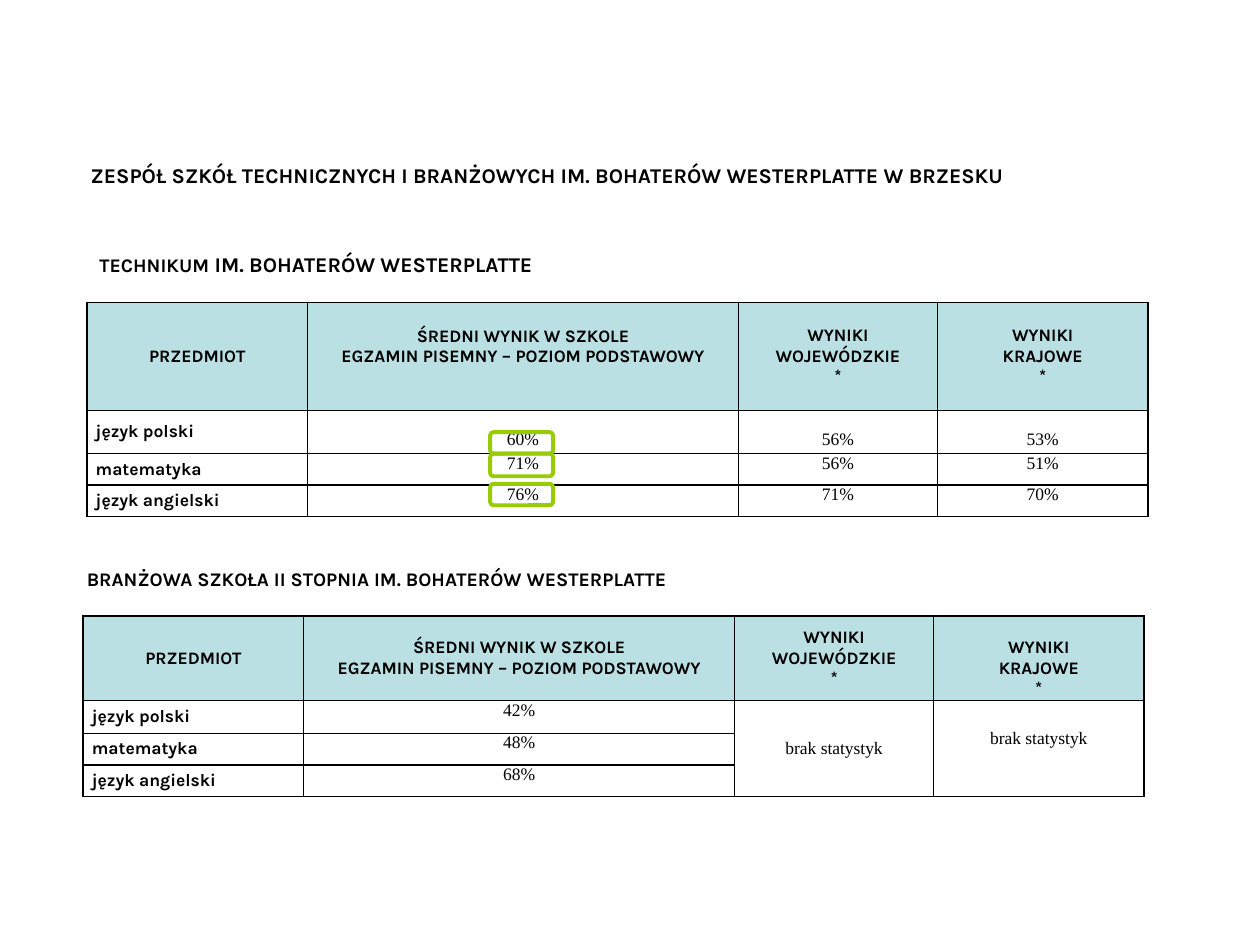
from lxml import etree
from pptx import Presentation
from pptx.dml.color import RGBColor
from pptx.enum.shapes import MSO_SHAPE as Shape
from pptx.enum.text import MSO_ANCHOR as Anchor, MSO_AUTO_SIZE as AutoSize, PP_ALIGN as Align
from pptx.oxml.ns import qn
from pptx.util import Inches, Pt

BLACK, HEADER_FILL, RING = "000000", "BBE0E3", "99CC00"
COLUMN_WIDTHS = [1.75, 3.42, 1.58, 1.67]
SUBJECTS = ["język polski", "matematyka", "język angielski"]
SCHOOL_HEADER = "ŚREDNI WYNIK W SZKOLE\nEGZAMIN PISEMNY – POZIOM PODSTAWOWY"
HEADERS = ["PRZEDMIOT", SCHOOL_HEADER, "WYNIKI WOJEWÓDZKIE\n*", "WYNIKI\nKRAJOWE\n*"]
NO_DATA = "brak statystyk"
LINE_GAP = 0.16  # height of one 10 pt line

BOLD = {"name": "Karla", "size": Pt(10), "bold": True}
PLAIN = {"name": "Times New Roman", "size": Pt(10), "bold": False}


def color(hex_value):
    return RGBColor.from_string(hex_value)


def set_values(target, values):
    for name, value in values.items():
        setattr(target, name, value)


def format_font(font, values):
    set_values(font, values)
    font.color.rgb = color(BLACK)


def add_heading(shape, box, runs, anchor=Anchor.TOP):
    """Place a left-aligned heading made of (text, size) runs."""
    set_values(shape, dict(zip(("left", "top", "width", "height"), map(Inches, box))))
    frame = shape.text_frame
    set_values(frame, {"word_wrap": True, "auto_size": AutoSize.NONE, "vertical_anchor": anchor})
    paragraph = frame.paragraphs[0]
    paragraph.alignment = Align.LEFT
    for text, size in runs:
        run = paragraph.add_run()
        run.text = text
        format_font(run.font, {**BOLD, "size": Pt(size)})


def add_borders(cell):
    properties = cell._tc.get_or_add_tcPr()
    for side in ("lnL", "lnR", "lnT", "lnB"):
        line = etree.SubElement(properties, qn(f"a:{side}"), w=str(Pt(1)))
        fill = etree.SubElement(line, qn("a:solidFill"))
        etree.SubElement(fill, qn("a:srgbClr"), val=BLACK)


def fill_cell(cell, text, font, align, anchor, padding=(0, 0)):
    """Write a cell; padding is its top and bottom margin in inches."""
    add_borders(cell)
    cell.fill.background()
    top, bottom = map(Inches, padding)
    set_values(cell, {"margin_left": Inches(0.07), "margin_right": Inches(0.07),
                      "margin_top": top, "margin_bottom": bottom, "vertical_anchor": anchor})
    cell.text_frame.text = text
    for paragraph in cell.text_frame.paragraphs:
        paragraph.alignment = align
        for run in paragraph.runs:
            format_font(run.font, font)


def add_results_table(slide, left, top, row_heights, results, paddings, merges=()):
    """Build a results table; paddings maps (row, column) to cell padding."""
    width, height = Inches(sum(COLUMN_WIDTHS)), Inches(sum(row_heights))
    table = slide.shapes.add_table(len(row_heights), len(COLUMN_WIDTHS),
                                   Inches(left), Inches(top), width, height).table
    set_values(table, {"first_row": False, "horz_banding": False})
    for column, column_width in zip(table.columns, COLUMN_WIDTHS):
        column.width = Inches(column_width)
    for row, row_height in zip(table.rows, row_heights):
        row.height = Inches(row_height)

    rows = [HEADERS] + [[subject, *values] for subject, values in zip(SUBJECTS, results)]
    for i, texts in enumerate(rows):
        for j, text in enumerate(texts):
            is_value = i > 0 and j > 0
            centered = is_value and text != NO_DATA
            fill_cell(table.cell(i, j), text, PLAIN if is_value else BOLD,
                      Align.LEFT if i > 0 and j == 0 else Align.CENTER,
                      Anchor.TOP if centered else Anchor.MIDDLE,
                      paddings.get((i, j), (0, 0)))
            if i == 0:
                table.cell(i, j).fill.solid()
                table.cell(i, j).fill.fore_color.rgb = color(HEADER_FILL)
    for column in merges:
        table.cell(1, column).merge(table.cell(len(SUBJECTS), column))


def add_ring(slide, left, top, width, height):
    ring = slide.shapes.add_shape(Shape.ROUNDED_RECTANGLE, *map(Inches, (left, top, width, height)))
    ring.shadow.inherit = False
    ring.fill.background()
    ring.line.color.rgb = color(RING)
    ring.line.width = Pt(2.25)


def add_technical_school(slide, left, top):
    heading = slide.shapes.add_textbox(0, 0, 0, 0)
    add_heading(heading, (left, top, 4.13, 0.3),
                [("TECHNIKUM", 11), (" IM. BOHATERÓW WESTERPLATTE", 12)])
    paddings = {(1, column): (0.15, 0) for column in (1, 2, 3)}
    paddings[0, 1] = (0, LINE_GAP)
    add_results_table(slide, left, top + 0.45, [0.86, 0.34, 0.25, 0.25],
                      [["60%", "56%", "53%"], ["71%", "56%", "51%"], ["76%", "71%", "70%"]],
                      paddings)
    for offset, height in ((1.48, 0.17), (1.65, 0.18), (1.89, 0.17)):
        add_ring(slide, left + 3.2, top + offset, 0.5, height)


def add_trade_school(slide, left, top):
    heading = slide.shapes.add_textbox(0, 0, 0, 0)
    add_heading(heading, (left, top, 5.55, 0.29),
                [("BRANŻOWA SZKOŁA II STOPNIA IM. BOHATERÓW WESTERPLATTE", 11)])
    add_results_table(slide, left + 0.07, top + 0.44, [0.67, 0.26, 0.25, 0.25],
                      [["42%", NO_DATA, NO_DATA], ["48%", "", ""], ["68%", "", ""]],
                      {(0, 3): (LINE_GAP, 0), (1, 3): (0, LINE_GAP)}, merges=(2, 3))


def main():
    presentation = Presentation()
    presentation.slide_width, presentation.slide_height = Inches(10), Inches(7.5)
    slide = presentation.slides.add_slide(presentation.slide_layouts[5])
    title = "ZESPÓŁ SZKÓŁ TECHNICZNYCH I BRANŻOWYCH IM. BOHATERÓW WESTERPLATTE W BRZESKU"
    add_heading(slide.shapes.title, (0.62, 1.24, 8.21, 0.3), [(title, 12)], Anchor.MIDDLE)
    add_technical_school(slide, 0.69, 1.95)
    add_trade_school(slide, 0.59, 4.45)
    presentation.save("out.pptx")


if __name__ == "__main__":
    main()
